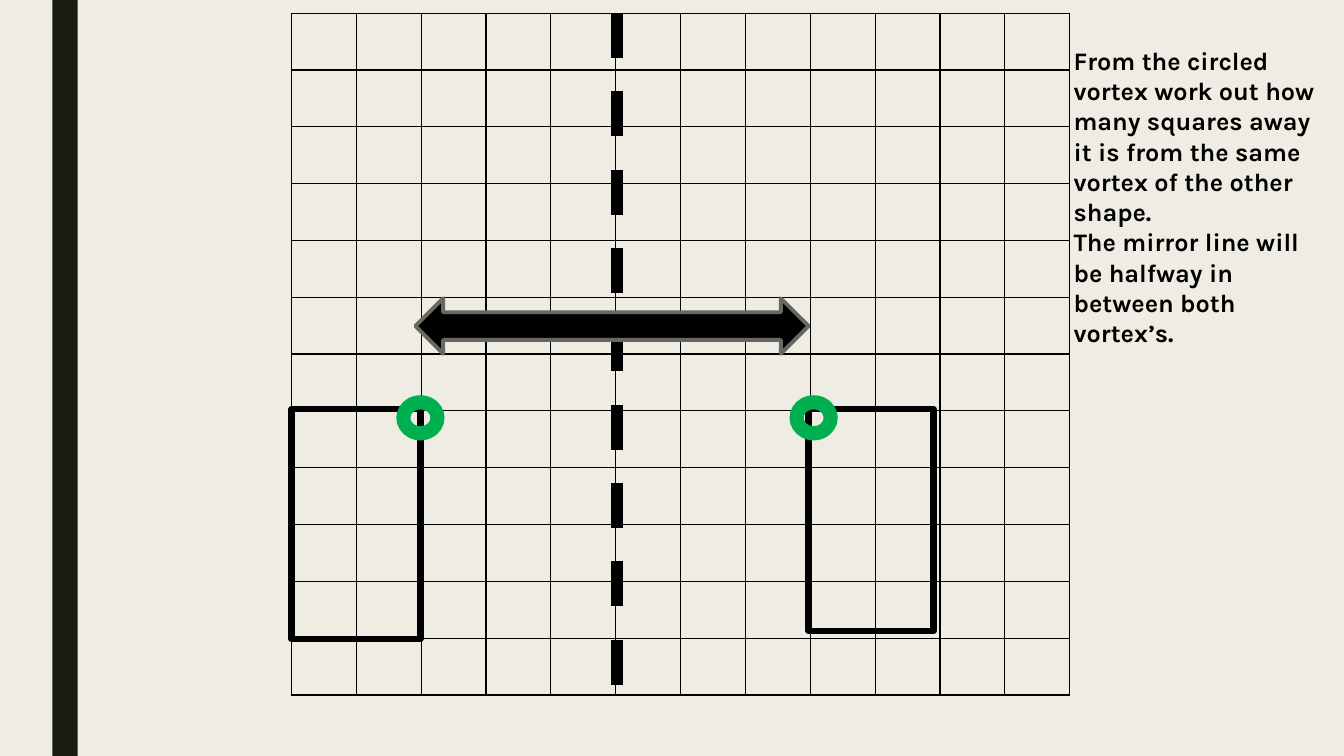
import dataclasses

import pptx
import pptx.dml.color
import pptx.enum.dml
import pptx.enum.shapes
import pptx.enum.text
import pptx.oxml
import pptx.oxml.ns
import pptx.util

PX = 9144  # EMU per px, 100 px to the inch
SHAPE = pptx.enum.shapes.MSO_SHAPE


@dataclasses.dataclass(frozen=True)
class Theme:
    background: str = "EFEDE3"
    band: str = "191B0E"
    ink: str = "000000"
    marker: str = "00B050"
    arrow_edge: str = "686863"
    font: str = "Karla"
    text_size: int = 18
    grid_line: float = 1
    outline: float = 4.5
    edge: float = 2.75
    mirror: float = 8


def rgb(color):
    return pptx.dml.color.RGBColor.from_string(color)


class SlideBuilder:
    def __init__(self, slide, theme):
        self.slide = slide
        self.theme = theme
        slide.background.fill.solid()
        slide.background.fill.fore_color.rgb = rgb(theme.background)

    def shape(self, kind, box, fill=None, line=None, width=0):
        item = self.slide.shapes.add_shape(kind, *(v * PX for v in box))
        item.shadow.inherit = False
        if fill:
            item.fill.solid()
            item.fill.fore_color.rgb = rgb(fill)
        else:
            item.fill.background()
        if line:
            item.line.color.rgb = rgb(line)
            item.line.width = pptx.util.Pt(width)
        else:
            item.line.fill.background()

    def grid(self, rows, columns, box):
        frame = self.slide.shapes.add_table(rows, columns, *(v * PX for v in box))
        frame.table.first_row = False
        frame.table.horz_banding = False
        for cell in frame.table.iter_cells():
            cell.fill.background()
            self.borders(cell)

    def borders(self, cell):
        properties = cell._tc.get_or_add_tcPr()
        width = pptx.util.Pt(self.theme.grid_line)
        for index, side in enumerate(("lnL", "lnR", "lnT", "lnB")):
            properties.insert(index, pptx.oxml.parse_xml(
                f'<a:{side} {pptx.oxml.ns.nsdecls("a")} w="{width}"><a:solidFill>'
                f'<a:srgbClr val="{self.theme.ink}"/></a:solidFill></a:{side}>'))

    def dashed_line(self, start, end):
        line = self.slide.shapes.add_connector(
            pptx.enum.shapes.MSO_CONNECTOR.STRAIGHT, *(v * PX for v in start + end))
        line.line.color.rgb = rgb(self.theme.ink)
        line.line.width = pptx.util.Pt(self.theme.mirror)
        line.line.dash_style = pptx.enum.dml.MSO_LINE.DASH
        line._element.spPr.append(
            pptx.oxml.parse_xml(f'<a:effectLst {pptx.oxml.ns.nsdecls("a")}/>'))

    def text(self, box, paragraphs):
        frame = self.slide.shapes.add_textbox(*(v * PX for v in box)).text_frame
        frame.word_wrap = True
        frame.auto_size = pptx.enum.text.MSO_AUTO_SIZE.SHAPE_TO_FIT_TEXT
        for index, words in enumerate(paragraphs):
            paragraph = frame.add_paragraph() if index else frame.paragraphs[0]
            run = paragraph.add_run()
            run.text = words
            run.font.name = self.theme.font
            run.font.size = pptx.util.Pt(self.theme.text_size)
            run.font.bold = True
            run.font.color.rgb = rgb(self.theme.ink)


def main():
    deck = pptx.Presentation()
    deck.slide_width = pptx.util.Inches(13.33)
    deck.slide_height = pptx.util.Inches(7.5)
    theme = Theme()
    builder = SlideBuilder(deck.slides.add_slide(deck.slide_layouts[6]), theme)

    # Side band and squared grid
    builder.shape(SHAPE.RECTANGLE, (52, 0, 25, 750), fill=theme.band)
    builder.grid(12, 12, (289, 13, 772, 677))

    # Reflected rectangles and their mirror line
    for rectangle in ((802, 406, 124, 220), (289, 406, 128, 228)):
        builder.shape(SHAPE.RECTANGLE, rectangle, line=theme.ink, width=theme.outline)
    builder.dashed_line((612, 13), (612, 690))

    # Circled vertices and the distance between them
    for vertex_left in (395, 785):
        builder.shape(SHAPE.DONUT, (vertex_left, 394, 44, 41),
                      theme.marker, theme.marker, theme.edge)
    builder.shape(SHAPE.LEFT_RIGHT_ARROW, (412, 296, 390, 55),
                  theme.ink, theme.arrow_edge, theme.edge)

    # Instructions
    builder.text((1055, 40, 260, 252), (
        "From the circled vortex work out how many squares away it is "
        "from the same vortex of the other shape.",
        "The mirror line will be halfway in between both vortex’s."))

    deck.save("out.pptx")


if __name__ == "__main__":
    main()
